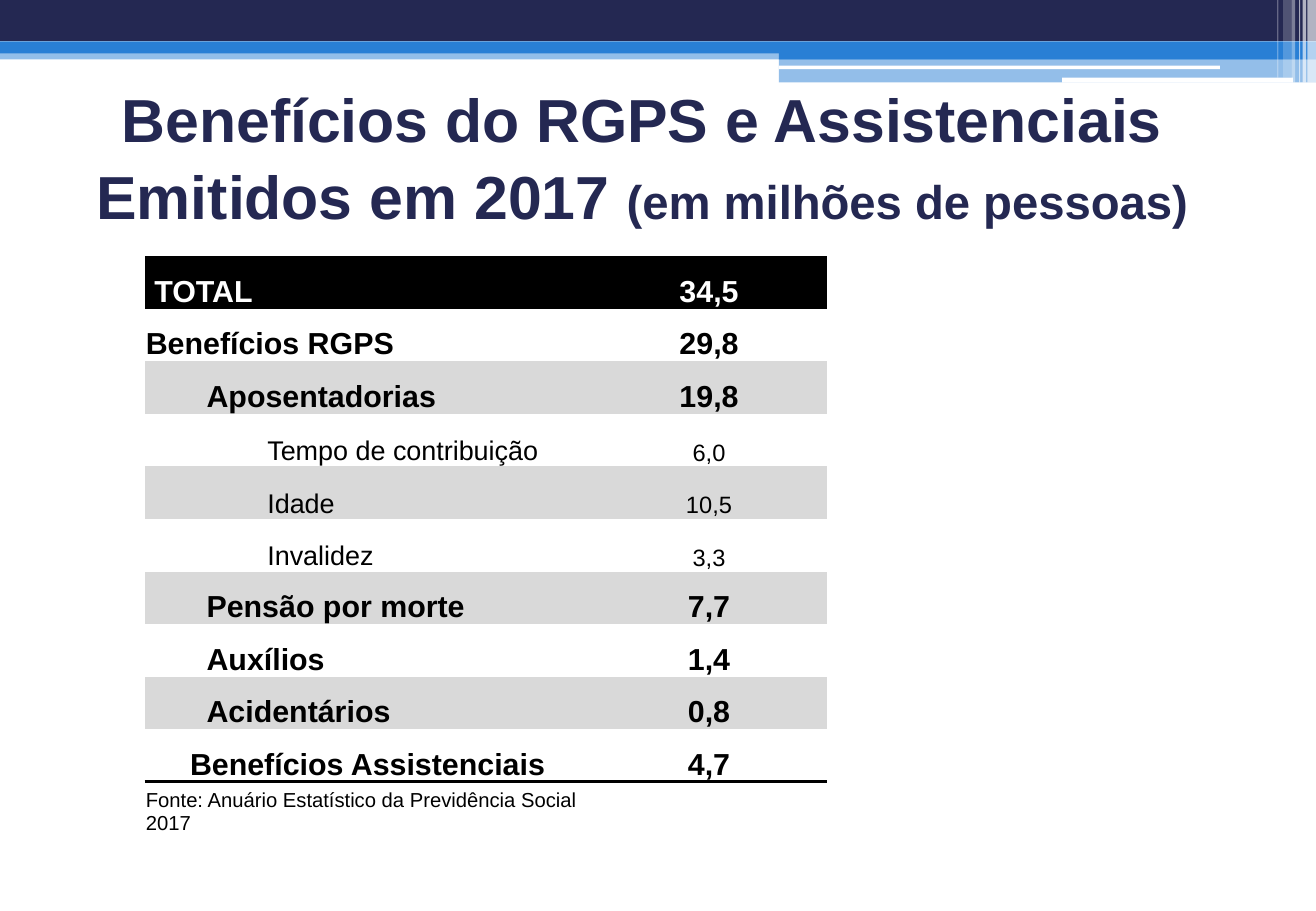
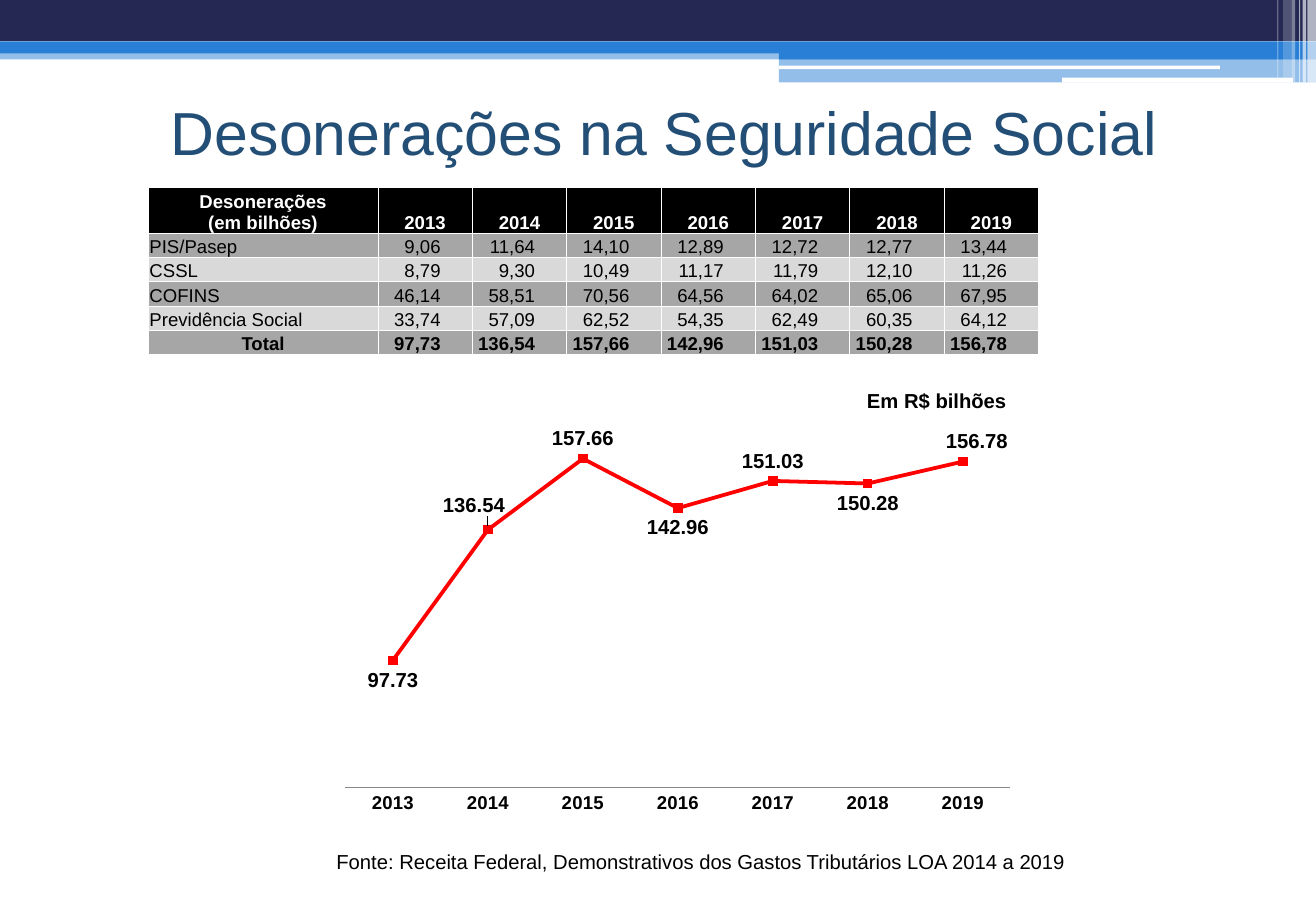
from lxml.etree import SubElement
from pptx import Presentation
from pptx.chart.data import CategoryChartData
from pptx.dml.color import RGBColor
from pptx.enum.chart import XL_CHART_TYPE, XL_LABEL_POSITION, XL_MARKER_STYLE, XL_TICK_MARK
from pptx.enum.shapes import MSO_SHAPE
from pptx.enum.text import MSO_ANCHOR, PP_ALIGN
from pptx.oxml import parse_xml
from pptx.oxml.ns import nsdecls, qn
from pptx.util import Inches, Pt

NAVY = RGBColor(0x24, 0x28, 0x52)
BLUE = RGBColor(0x29, 0x7F, 0xD5)
TITLE_BLUE = RGBColor(0x23, 0x4F, 0x77)
WHITE = RGBColor(0xFF, 0xFF, 0xFF)
BLACK = RGBColor(0, 0, 0)
RED = RGBColor(0xFF, 0, 0)
LIGHT_GRAY = RGBColor(0xD9, 0xD9, 0xD9)
MID_GRAY = RGBColor(0xA6, 0xA6, 0xA6)
AXIS_GRAY = RGBColor(0x86, 0x86, 0x86)
FONT = "Arial"
NO_TABLE_STYLE = "{2D5ABB26-0587-4C30-8999-92F81FD0307C}"
LEFT, CENTER, RIGHT = PP_ALIGN.LEFT, PP_ALIGN.CENTER, PP_ALIGN.RIGHT

SLIDE_WIDTH, SLIDE_HEIGHT = 10.83, 7.5
STEP_LEFT = 6.41
STEP_WIDTH = SLIDE_WIDTH - STEP_LEFT
# left, top, width, height, colour, opacity in percent
BANDS = [
    (0, 0.4, SLIDE_WIDTH, 0.09, BLUE, 50),
    (0, 0, SLIDE_WIDTH, 0.34, NAVY, 100),
    (0, 0.34, SLIDE_WIDTH, 0.1, BLUE, 100),
    (STEP_LEFT, 0.39, STEP_WIDTH, 0.1, BLUE, 100),
    (STEP_LEFT, 0.48, STEP_WIDTH, 0.2, BLUE, 50),
    (STEP_LEFT, 0.54, 3.63, 0.03, WHITE, 100),
    (8.74, 0.64, 1.9, 0.04, WHITE, 100),
    (10.76, 0, 0.07, 0.68, WHITE, 65),
    (10.72, 0, 0.03, 0.68, WHITE, 65),
    (10.69, 0, 0.01, 0.68, WHITE, 60),
    (10.63, 0, 0.03, 0.68, WHITE, 40),
    (10.56, 0, 0.07, 0.64, WHITE, 20),
    (10.51, 0, 0.01, 0.64, WHITE, 30),
]

# label, value, indent, label size, value size, bold, fill
BENEFITS = [
    ("TOTAL", "34,5", 0.07, 18, 18, True, BLACK),
    ("Benefícios RGPS", "29,8", 0, 18, 18, True, None),
    ("Aposentadorias", "19,8", 0.5, 18, 18, True, LIGHT_GRAY),
    ("Tempo de contribuição", "6,0", 1, 16, 14, False, None),
    ("Idade", "10,5", 1, 16, 14, False, LIGHT_GRAY),
    ("Invalidez", "3,3", 1, 16, 14, False, WHITE),
    ("Pensão por morte", "7,7", 0.5, 18, 18, True, LIGHT_GRAY),
    ("Auxílios", "1,4", 0.5, 18, 18, True, WHITE),
    ("Acidentários", "0,8", 0.5, 18, 18, True, LIGHT_GRAY),
    ("Benefícios Assistenciais", "4,7", 0, 18, 18, True, WHITE),
    ("Fonte: Anuário Estatístico da Previdência Social 2017", "", 0, 12, 12, False, WHITE),
]

YEARS = ["2013", "2014", "2015", "2016", "2017", "2018", "2019"]
EXEMPTIONS = [
    ["Desonerações\n(em bilhões)", *YEARS],
    ["PIS/Pasep", "9,06", "11,64", "14,10", "12,89", "12,72", "12,77", "13,44"],
    ["CSSL", "8,79", "9,30", "10,49", "11,17", "11,79", "12,10", "11,26"],
    ["COFINS", "46,14", "58,51", "70,56", "64,56", "64,02", "65,06", "67,95"],
    ["Previdência Social", "33,74", "57,09", "62,52", "54,35", "62,49", "60,35", "64,12"],
    ["Total", "97,73", "136,54", "157,66", "142,96", "151,03", "150,28", "156,78"],
]
TOTALS = [97.73, 136.54, 157.66, 142.96, 151.03, 150.28, 156.78]
ABOVE, BELOW = XL_LABEL_POSITION.ABOVE, XL_LABEL_POSITION.BELOW
LABEL_POSITIONS = [BELOW, ABOVE, ABOVE, BELOW, ABOVE, BELOW, ABOVE]
LABEL_SHIFTS = {1: (-0.02, -0.01), 6: (0.02, 0)}


def format_font(font, size, color=BLACK, bold=False):
    font.name = FONT
    font.size = Pt(size)
    font.bold = bold
    font.color.rgb = color


def add_run(paragraph, text, **font_format):
    run = paragraph.add_run()
    run.text = text
    format_font(run.font, **font_format)


def add_text_box(slide, box, runs, align=LEFT, anchor=MSO_ANCHOR.TOP, wrap=True, line_spacing=1.0):
    """Add one paragraph made of (text, font format) runs."""
    frame = slide.shapes.add_textbox(*map(Inches, box)).text_frame
    frame.word_wrap = wrap
    frame.vertical_anchor = anchor
    paragraph = frame.paragraphs[0]
    paragraph.alignment = align
    paragraph.line_spacing = line_spacing
    for text, font_format in runs:
        add_run(paragraph, text, **font_format)


def add_title(slide, box, runs, **options):
    add_text_box(slide, box, runs, align=CENTER, anchor=MSO_ANCHOR.MIDDLE, **options)


def add_bands(slide):
    for left, top, width, height, color, opacity in BANDS:
        band = slide.shapes.add_shape(
            MSO_SHAPE.RECTANGLE, Inches(left), Inches(top), Inches(width), Inches(height))
        band.shadow.inherit = False
        band.line.fill.background()
        band.fill.solid()
        band.fill.fore_color.rgb = color
        if opacity < 100:
            color_element = band.element.spPr.find(qn("a:solidFill"))[0]
            SubElement(color_element, qn("a:alpha")).set("val", str(opacity * 1000))


def add_plain_table(slide, left, top, column_widths, row_heights):
    frame = slide.shapes.add_table(
        len(row_heights), len(column_widths), Inches(left), Inches(top),
        Inches(sum(column_widths)), Inches(sum(row_heights)))
    table = frame.table
    table.first_row = table.horz_banding = False
    table._tbl.tblPr.find(qn("a:tableStyleId")).text = NO_TABLE_STYLE
    for column, width in zip(table.columns, column_widths):
        column.width = Inches(width)
    for row, height in zip(table.rows, row_heights):
        row.height = Inches(height)
    return table


def add_border(cell, side, color, width):
    """Draw one side (L, R, T or B); call in that order and before the fill is set."""
    cell._tc.get_or_add_tcPr().append(parse_xml(
        f'<a:ln{side} {nsdecls("a")} w="{Pt(width)}"><a:solidFill>'
        f'<a:srgbClr val="{color}"/></a:solidFill></a:ln{side}>'))


def fill_cell(cell, text, fill, align=LEFT, indent=0, right_indent=0, **font_format):
    cell.vertical_anchor = MSO_ANCHOR.BOTTOM
    cell.margin_left = Inches(0.01 + indent)
    cell.margin_right = Inches(0.01 + right_indent)
    cell.margin_top, cell.margin_bottom = Inches(0.01), 0
    if fill is None:
        cell.fill.background()
    else:
        cell.fill.solid()
        cell.fill.fore_color.rgb = fill
    cell.text = text
    for paragraph in cell.text_frame.paragraphs:
        paragraph.alignment = align
        format_font(paragraph.font, **font_format)
        for run in paragraph.runs:
            format_font(run.font, **font_format)


def add_benefits_table(slide, left, top, height):
    row_count = len(BENEFITS)
    table = add_plain_table(slide, left, top, [3.67, 1.95], [height / row_count] * row_count)
    last_benefit = row_count - 2
    for row, (label, value, indent, label_size, value_size, bold, fill) in enumerate(BENEFITS):
        color = WHITE if fill == BLACK else BLACK
        for column in range(2):
            if row == last_benefit:
                add_border(table.cell(row, column), "B", BLACK, 2.25)
            elif row > last_benefit:
                add_border(table.cell(row, column), "T", BLACK, 2.25)
        fill_cell(table.cell(row, 0), label, fill, indent=indent, size=label_size, color=color,
                  bold=bold, align=CENTER if row == last_benefit else LEFT)
        fill_cell(table.cell(row, 1), value, fill, align=CENTER, size=value_size, color=color,
                  bold=bold)


def add_exemptions_table(slide, left, top):
    last_row = len(EXEMPTIONS) - 1
    table = add_plain_table(
        slide, left, top, [1.89] + [0.777] * len(YEARS), [0.38] + [0.2] * last_row)
    for row, values in enumerate(EXEMPTIONS):
        is_header = row == 0
        emphasized = row in (0, last_row)
        fill = BLACK if is_header else MID_GRAY if row % 2 else LIGHT_GRAY
        for column, text in enumerate(values):
            is_number = column > 0 and not is_header
            cell = table.cell(row, column)
            for side in "LRTB":
                add_border(cell, side, WHITE, 0.5)
            align = RIGHT if is_number else CENTER if emphasized else LEFT
            fill_cell(cell, text, fill, align=align, right_indent=0.25 if is_number else 0,
                      size=11, color=WHITE if is_header else BLACK, bold=emphasized)


def set_layout(element, index, x, y, size=None):
    """Place a chart part by fractions of the chart; with a size it is an inner plot area."""
    for old_layout in element.findall(qn("c:layout")):
        element.remove(old_layout)
    layout = parse_xml(f'<c:layout {nsdecls("c")}/>')
    manual = SubElement(layout, qn("c:manualLayout"))
    settings = [("x", x), ("y", y)]
    if size:
        settings = [("layoutTarget", "inner"), ("xMode", "edge"), ("yMode", "edge"),
                    *settings, ("w", size[0]), ("h", size[1])]
    elif element.tag == qn("c:title"):
        settings = [("xMode", "edge"), ("yMode", "edge"), *settings]
    for name, value in settings:
        SubElement(manual, qn(f"c:{name}")).set("val", str(value))
    element.insert(index, layout)


def add_exemptions_chart(slide, box):
    data = CategoryChartData(number_format="0.00")
    data.categories = YEARS
    data.add_series("Total", TOTALS)
    chart = slide.shapes.add_chart(
        XL_CHART_TYPE.LINE_MARKERS, *map(Inches, box), data).chart
    chart.has_legend = False
    format_font(chart.font, 10)

    chart.has_title = True
    add_run(chart.chart_title.text_frame.paragraphs[0], "Em R$ bilhões", size=12, bold=True)
    set_layout(chart.element.xpath("c:chart/c:title")[0], 1, 0.77, 0.01)
    set_layout(chart.element.xpath("c:chart/c:plotArea")[0], 0, 0.03, 0.08, (0.95, 0.8))

    value_axis = chart.value_axis
    value_axis.minimum_scale, value_axis.maximum_scale = 60, 170
    value_axis.has_major_gridlines = False
    value_axis.visible = False
    category_axis = chart.category_axis
    category_axis.major_tick_mark = XL_TICK_MARK.NONE
    category_axis.format.line.color.rgb = AXIS_GRAY
    category_axis.format.line.width = Pt(0.75)
    format_font(category_axis.tick_labels.font, 11, bold=True)

    plot = chart.plots[0]
    plot.vary_by_categories = False
    series = plot.series[0]
    series.smooth = False
    series.format.line.color.rgb = RED
    series.format.line.width = Pt(2.25)
    series.marker.style = XL_MARKER_STYLE.SQUARE
    series.marker.size = 5
    series.marker.format.fill.solid()
    series.marker.format.fill.fore_color.rgb = RED
    series.marker.format.line.color.rgb = RED
    for index, position in enumerate(LABEL_POSITIONS):
        label = series.points[index].data_label
        format_font(label.font, 12, bold=True)
        label.position = position
    for label_element in chart.element.xpath(".//c:dLbl"):
        index = int(label_element.find(qn("c:idx")).get("val"))
        if index in LABEL_SHIFTS:
            set_layout(label_element, 1, *LABEL_SHIFTS[index])


def add_banded_slide(presentation):
    slide = presentation.slides.add_slide(presentation.slide_layouts[6])
    add_bands(slide)
    return slide


def build_benefits_slide(presentation):
    slide = add_banded_slide(presentation)
    add_title(slide, (0.56, 0.69, 9.45, 1.17), [
        ("Benefícios do RGPS e Assistenciais Emitidos em 2017 ",
         {"size": 36, "color": NAVY, "bold": True}),
        ("(em milhões de pessoas)", {"size": 28, "color": NAVY, "bold": True}),
    ], line_spacing=1.05)
    add_benefits_table(slide, 1.19, 2.11, 4.76)


def build_exemptions_slide(presentation):
    slide = add_banded_slide(presentation)
    add_title(slide, (0.59, 0.78, 9.75, 0.6), [
        ("Desonerações na Seguridade Social", {"size": 36, "color": TITLE_BLUE})])
    add_text_box(slide, (2.67, 6.94, 6.25, 0.3), [
        ("Fonte: Receita Federal, Demonstrativos dos Gastos Tributários LOA 2014 a 2019",
         {"size": 12})], wrap=False)
    add_exemptions_table(slide, 1.22, 1.54)
    add_exemptions_chart(slide, (2.67, 3.13, 5.76, 3.81))


def main():
    presentation = Presentation()
    presentation.slide_width = Inches(SLIDE_WIDTH)
    presentation.slide_height = Inches(SLIDE_HEIGHT)
    build_benefits_slide(presentation)
    build_exemptions_slide(presentation)
    presentation.save("out.pptx")


if __name__ == "__main__":
    main()
